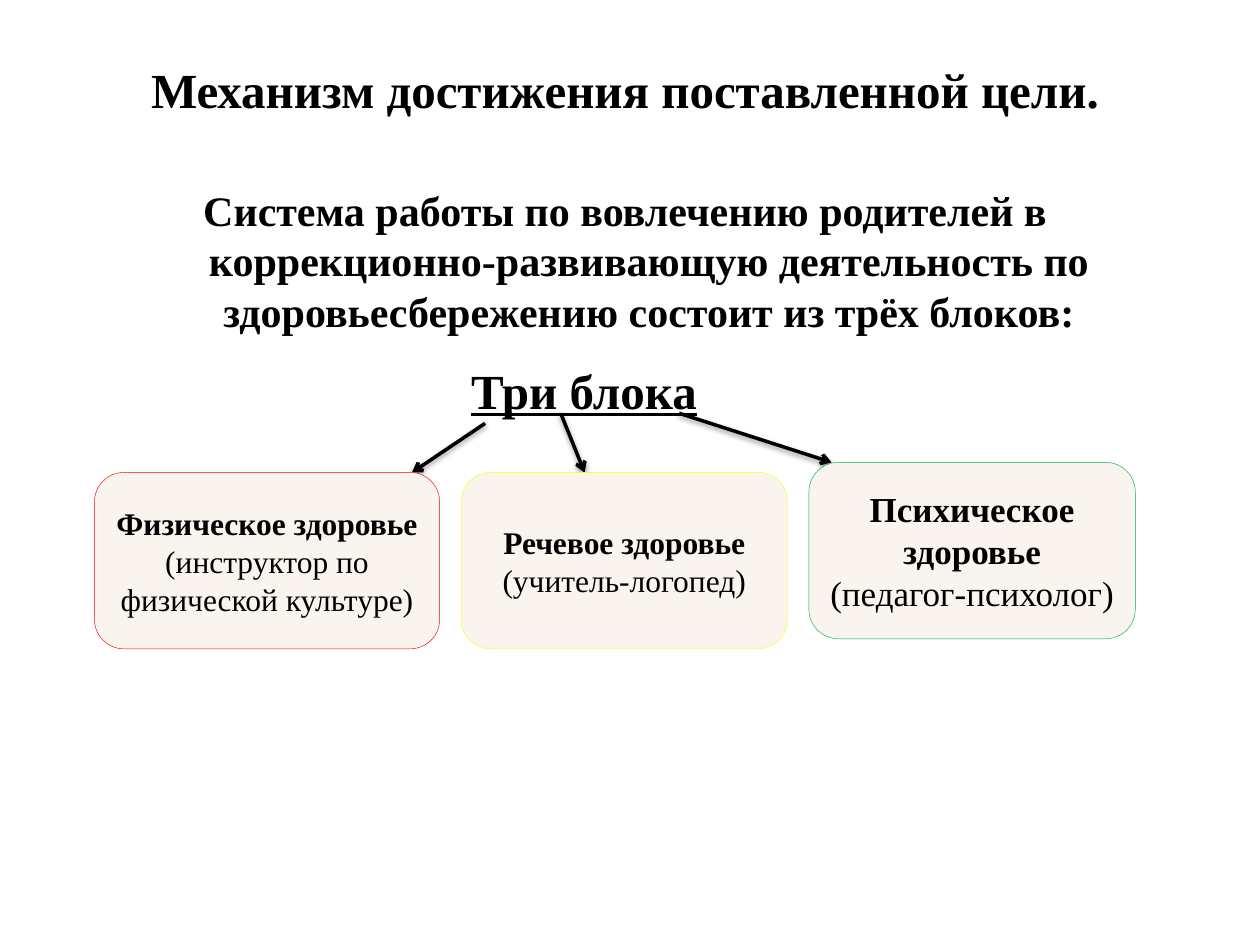
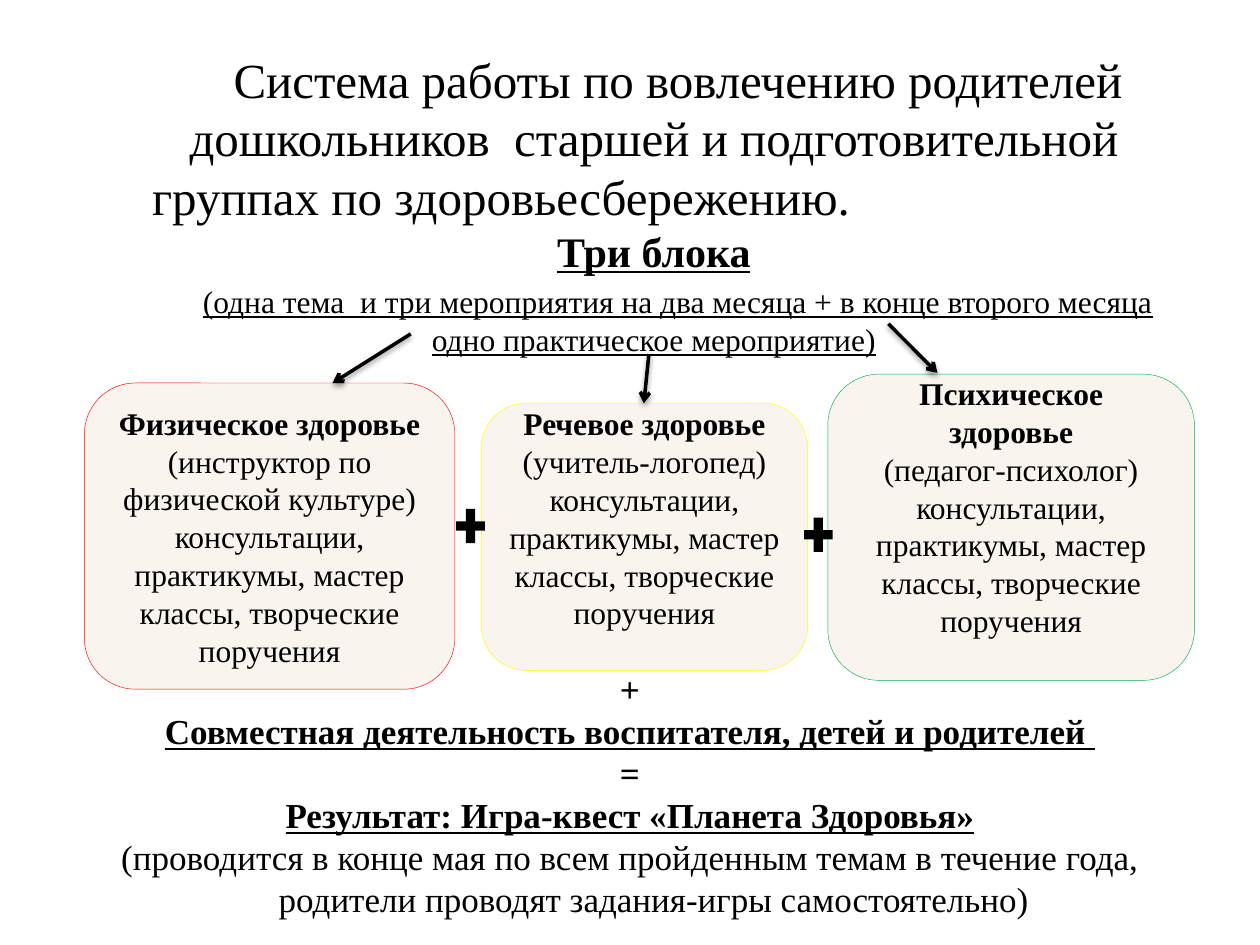
from lxml import etree
from pptx import Presentation
from pptx import util as u
from pptx.dml.color import RGBColor
from pptx.enum import shapes, text
from pptx.oxml import parse_xml

# Shared look
WIDTH, HEIGHT = 10, 7.5
FONT = "Times New Roman"
COLORS = {"ink": "000000", "block": "F9F4EE", "physical": "FF0000",
          "speech": "FFFF00", "mental": "00B050"}
DRAWING = "http://schemas.openxmlformats.org/drawingml/2006/main"
ARROW_SHADOW = (
    f'<a:effectLst xmlns:a="{DRAWING}"><a:outerShdw blurRad="39370" dist="20320" '
    'dir="5400000" rotWithShape="0"><a:srgbClr val="000000"><a:alpha val="38000"/>'
    '</a:srgbClr></a:outerShdw></a:effectLst>')
CENTER, LEFT = text.PP_ALIGN.CENTER, text.PP_ALIGN.LEFT
HANGING, INDENTED, FLUSH = (0.38, -0.38), (0.38, 0.38), (0.38, 0)

# Content: a paragraph is (text, size, style letters, options)
THREE_BLOCKS = "Три блока"
HEALTH = {
    "physical": ("Физическое здоровье", "(инструктор по физической культуре)"),
    "speech": ("Речевое здоровье", "(учитель-логопед)"),
    "mental": ("Психическое здоровье", "(педагог-психолог)"),
}
ACTIVITIES = "консультации, практикумы, мастер классы, творческие поручения"

GOAL = [
    ("Механизм достижения поставленной цели.", 28, "b", {"indent": HANGING}),
    ("Система работы по вовлечению родителей в коррекционно-развивающую "
     "деятельность по здоровьесбережению состоит из трёх блоков:", 24, "b",
     {"indent": HANGING, "before": 38}),
]
SYSTEM = [
    ("Система работы по вовлечению родителей дошкольников  старшей и "
     "подготовительной", 28, "", {"indent": INDENTED}),
    ("группах по здоровьесбережению.", 28, "", {"indent": (0.38, 0.26), "align": LEFT}),
    (THREE_BLOCKS, 24, "bu", {"indent": FLUSH}),
    ("(одна тема  и три мероприятия на два месяца + в конце второго месяца "
     "одно практическое мероприятие)", 18, "u", {"indent": INDENTED, "before": 3.6}),
]
RESULT = [(line, 20, style, {"indent": HANGING}) for line, style in [
    ("+", "b"),
    ("Совместная деятельность воспитателя, детей и родителей ", "bu"),
    ("=", "b"),
    ("Результат: Игра-квест «Планета Здоровья»", "bu"),
    ("(проводится в конце мая по всем пройденным темам в течение года, "
     "родители проводят задания-игры самостоятельно)", ""),
]]

# Places in inches: blocks are (place, text size, extra bottom inset)
GOAL_BLOCKS = {
    "physical": ((0.75, 3.75, 2.74, 1.4), 18, 0),
    "mental": ((6.42, 3.67, 2.59, 1.4), 20, 0),
    "speech": ((3.66, 3.75, 2.59, 1.4), 18, 0),
}
SYSTEM_BLOCKS = {
    "physical": ((0.67, 3.04, 2.94, 2.43), 18, 0),
    "speech": ((3.82, 3.2, 2.59, 2.12), 18, 0.3),
    "mental": ((6.57, 2.97, 2.91, 2.43), 18, 0.33),
}
GOAL_ARROWS = [(5.39, 3.28, 6.6, 3.67), (4.45, 3.28, 4.64, 3.75), (3.85, 3.36, 3.27, 3.75)]
SYSTEM_ARROWS = [(7.05, 2.57, 7.44, 2.96), (5.15, 2.81, 5.11, 3.2), (3.26, 2.65, 2.64, 3.04)]
PLUSES = [(3.58, 3.99, 0.31, 0.37), (6.34, 4.06, 0.31, 0.37)]


def color(name):
    return RGBColor.from_string(COLORS[name])


def inches(lengths):
    return [u.Inches(length) for length in lengths]


def write(frame, paragraphs):
    frame.word_wrap = True
    for index, (words, size, style, options) in enumerate(paragraphs):
        para = frame.add_paragraph() if index else frame.paragraphs[0]
        para.alignment = options.get("align", CENTER)
        if "before" in options:
            para.space_before = u.Pt(options["before"])
        if "indent" in options:
            for key, length in zip(("marL", "indent"), options["indent"]):
                para._p.get_or_add_pPr().set(key, str(u.Inches(length)))
        span = para.add_run()
        span.text = words
        span.font.color.rgb = color("ink")
        looks = {"name": FONT, "size": u.Pt(size), "bold": "b" in style,
                 "underline": "u" in style}
        for key, value in looks.items():
            setattr(span.font, key, value)


def add_text(page, place, paragraphs):
    write(page.shapes.add_textbox(*inches(place)).text_frame, paragraphs)


def add_shape(page, kind, place, fill):
    shape = page.shapes.add_shape(kind, *inches(place))
    shape.shadow.inherit = False
    shape.fill.solid()
    shape.fill.fore_color.rgb = color(fill)
    shape.line.fill.background()
    return shape


def add_blocks(page, blocks, *details):
    for health, (place, size, extra) in blocks.items():
        box = add_shape(page, shapes.MSO_SHAPE.ROUNDED_RECTANGLE, place, "block")
        box.line.color.rgb = color(health)
        box.line.width = u.Pt(0.25)
        frame = box.text_frame
        frame.vertical_anchor = text.MSO_ANCHOR.MIDDLE
        frame.margin_bottom = u.Inches(0.05 + extra)
        name, role = HEALTH[health]
        write(frame, [(name, size, "b", {})]
              + [(line, size, "", {}) for line in (role, *details)])


def add_arrows(page, arrows):
    for ends in arrows:
        arrow = page.shapes.add_connector(shapes.MSO_CONNECTOR.STRAIGHT, *inches(ends))
        arrow.line.color.rgb = color("ink")
        arrow.line.width = u.Pt(2)
        etree.SubElement(arrow.line._get_or_add_ln(), f"{{{DRAWING}}}tailEnd", type="arrow")
        arrow._element.spPr.append(parse_xml(ARROW_SHADOW))


def build_goal(page):
    add_text(page, (0.7, 0.42, 8.52, 2.4), GOAL)
    add_arrows(page, GOAL_ARROWS)
    add_text(page, (3.27, 2.81, 2.73, 0.57), [(THREE_BLOCKS, 28, "bu", {})])
    add_blocks(page, GOAL_BLOCKS)


def build_system(page):
    add_text(page, (0.47, 0.34, 9.06, 2.55), SYSTEM)
    add_text(page, (0.47, 5.25, 9.06, 2.1), RESULT)
    add_blocks(page, SYSTEM_BLOCKS, ACTIVITIES)
    add_arrows(page, SYSTEM_ARROWS)
    for place in PLUSES:
        add_shape(page, shapes.MSO_SHAPE.MATH_PLUS, place, "ink")


def main():
    deck = Presentation()
    deck.slide_width, deck.slide_height = inches((WIDTH, HEIGHT))
    for build in (build_goal, build_system):
        build(deck.slides.add_slide(deck.slide_layouts[6]))
    deck.save("out.pptx")


if __name__ == "__main__":
    main()
